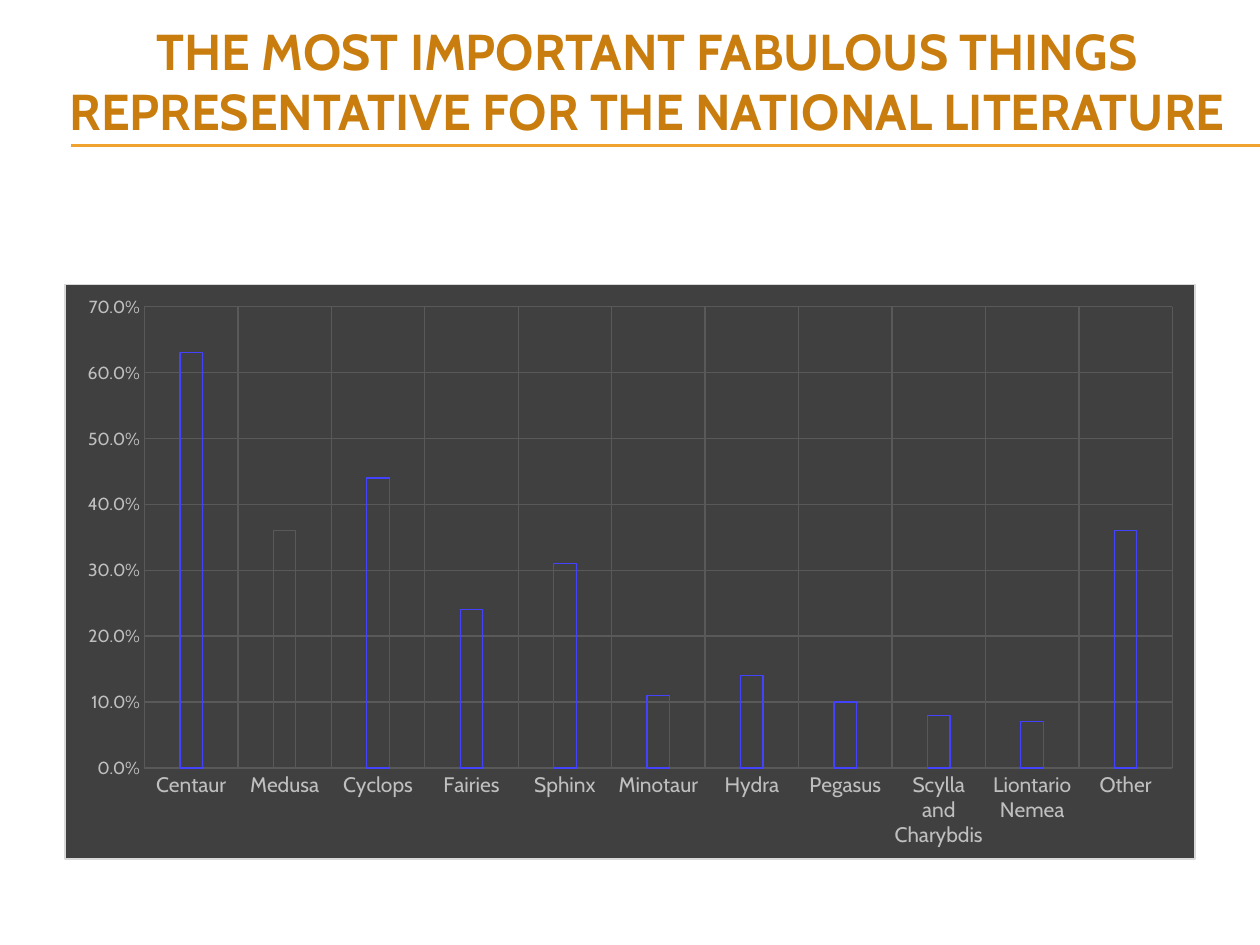
from lxml import etree
from pptx import Presentation
from pptx.chart.data import CategoryChartData
from pptx.dml.color import RGBColor
from pptx.enum.chart import XL_CHART_TYPE, XL_TICK_MARK
from pptx.enum.shapes import MSO_CONNECTOR
from pptx.enum.text import MSO_ANCHOR, MSO_AUTO_SIZE, PP_ALIGN
from pptx.oxml import parse_xml
from pptx.oxml.ns import nsdecls, qn
from pptx.util import Pt

COLUMN = XL_CHART_TYPE.COLUMN_CLUSTERED
NO_TICK = XL_TICK_MARK.NONE
STRAIGHT = MSO_CONNECTOR.STRAIGHT
MIDDLE = MSO_ANCHOR.MIDDLE
NO_FIT = MSO_AUTO_SIZE.NONE
CENTER = PP_ALIGN.CENTER

TITLE = "THE MOST IMPORTANT FABULOUS THINGS REPRESENTATIVE FOR THE NATIONAL LITERATURE"
SERIES = "Series 1"
SHARES = {
    "Centaur": 0.63,
    "Medusa": 0.36,
    "Cyclops": 0.44,
    "Fairies": 0.24,
    "Sphinx": 0.31,
    "Minotaur": 0.11,
    "Hydra": 0.14,
    "Pegasus": 0.1,
    "Scylla and Charybdis": 0.08,
    "Liontario Nemea": 0.07,
    "Other": 0.36,
}
MUTED_BAR = "Medusa"

THEME = {
    "font": "Cabin",
    "title": "C87D0E",
    "rule": "F0A22E",
    "panel": "404040",
    "border": "D9D9D9",
    "grid": "595959",
    "bar": "4242FF",
    "label": "BFBFBF",
    "title_size": 28.8,
    "category_size": 12,
    "value_size": 10,
    "line": 0.75,
}
SLIDE_W, SLIDE_H = 720, 540
TITLE_BOX = (19.8, 0, 699.84, 91.6)
CHART_BOX = (36.8, 162.3, 646.4, 329)
RULE_LEFT = 40.5
RULE_YS = (82.8, 83.4)


def color(name):
    """Return a theme colour."""
    return RGBColor.from_string(THEME[name])


def style_font(font, tint, size):
    """Apply the theme typeface, colour and size to a font."""
    font.name = THEME["font"]
    font.size = Pt(THEME[size])
    font.color.rgb = color(tint)


def style_line(line, tint):
    """Apply a thin theme-coloured line."""
    line.color.rgb = color(tint)
    line.width = Pt(THEME["line"])


def add_title(slide):
    """Place and format the title."""
    title = slide.shapes.title
    title.left, title.top, title.width, title.height = map(Pt, TITLE_BOX)
    frame = title.text_frame
    frame.text = TITLE
    frame.word_wrap = True
    frame.auto_size = NO_FIT
    frame.vertical_anchor = MIDDLE
    paragraph = frame.paragraphs[0]
    paragraph.alignment = CENTER
    style_font(paragraph.font, "title", "title_size")
    paragraph.font.bold = True


def add_rules(slide):
    """Draw the double rule below the title."""
    for y in RULE_YS:
        rule = slide.shapes.add_connector(
            STRAIGHT, Pt(RULE_LEFT), Pt(y), Pt(SLIDE_W), Pt(y))
        style_line(rule.line, "rule")
        etree.SubElement(rule._element.spPr, qn("a:effectLst"))


def style_axis(axis, size):
    """Format an axis with gridlines and no axis line."""
    axis.has_major_gridlines = True
    style_line(axis.major_gridlines.format.line, "grid")
    axis.major_tick_mark = axis.minor_tick_mark = NO_TICK
    axis.format.line.fill.background()
    style_font(axis.tick_labels.font, "label", size)


def fill_panel(chart):
    """Give the chart area its fill and border."""
    panel = parse_xml(
        f'<c:spPr {nsdecls("c", "a")}>'
        f'<a:solidFill><a:srgbClr val="{THEME["panel"]}"/></a:solidFill>'
        f'<a:ln w="{Pt(THEME["line"])}"><a:solidFill>'
        f'<a:srgbClr val="{THEME["border"]}"/></a:solidFill></a:ln></c:spPr>')
    chart._chartSpace.find(qn("c:chart")).addnext(panel)


def add_share_chart(slide):
    """Add the column chart of shares."""
    shares = CategoryChartData(number_format="0.0%")
    shares.categories = list(SHARES)
    shares.add_series(SERIES, list(SHARES.values()))
    chart = slide.shapes.add_chart(COLUMN, *map(Pt, CHART_BOX), shares).chart
    chart.has_title = chart.has_legend = False
    style_font(chart.font, "label", "value_size")
    fill_panel(chart)
    style_axis(chart.category_axis, "category_size")
    style_axis(chart.value_axis, "value_size")
    chart.value_axis.minimum_scale = 0
    chart.value_axis.maximum_scale = 0.7
    chart.value_axis.major_unit = 0.1
    chart.value_axis.tick_labels.number_format = "0.0%"
    chart.value_axis.tick_labels.number_format_is_linked = False
    plot = chart.plots[0]
    plot.vary_by_categories = False
    plot.gap_width, plot.overlap = 315, -40
    bars = plot.series[0]
    muted = bars.points[list(SHARES).index(MUTED_BAR)]
    for part, tint in ((bars, "bar"), (muted, "grid")):
        part.format.fill.background()
        style_line(part.format.line, tint)


def main():
    """Build the slide and save it."""
    deck = Presentation()
    deck.slide_width, deck.slide_height = Pt(SLIDE_W), Pt(SLIDE_H)
    slide = deck.slides.add_slide(deck.slide_layouts[5])
    add_rules(slide)
    add_title(slide)
    add_share_chart(slide)
    deck.save("out.pptx")


if __name__ == "__main__":
    main()
